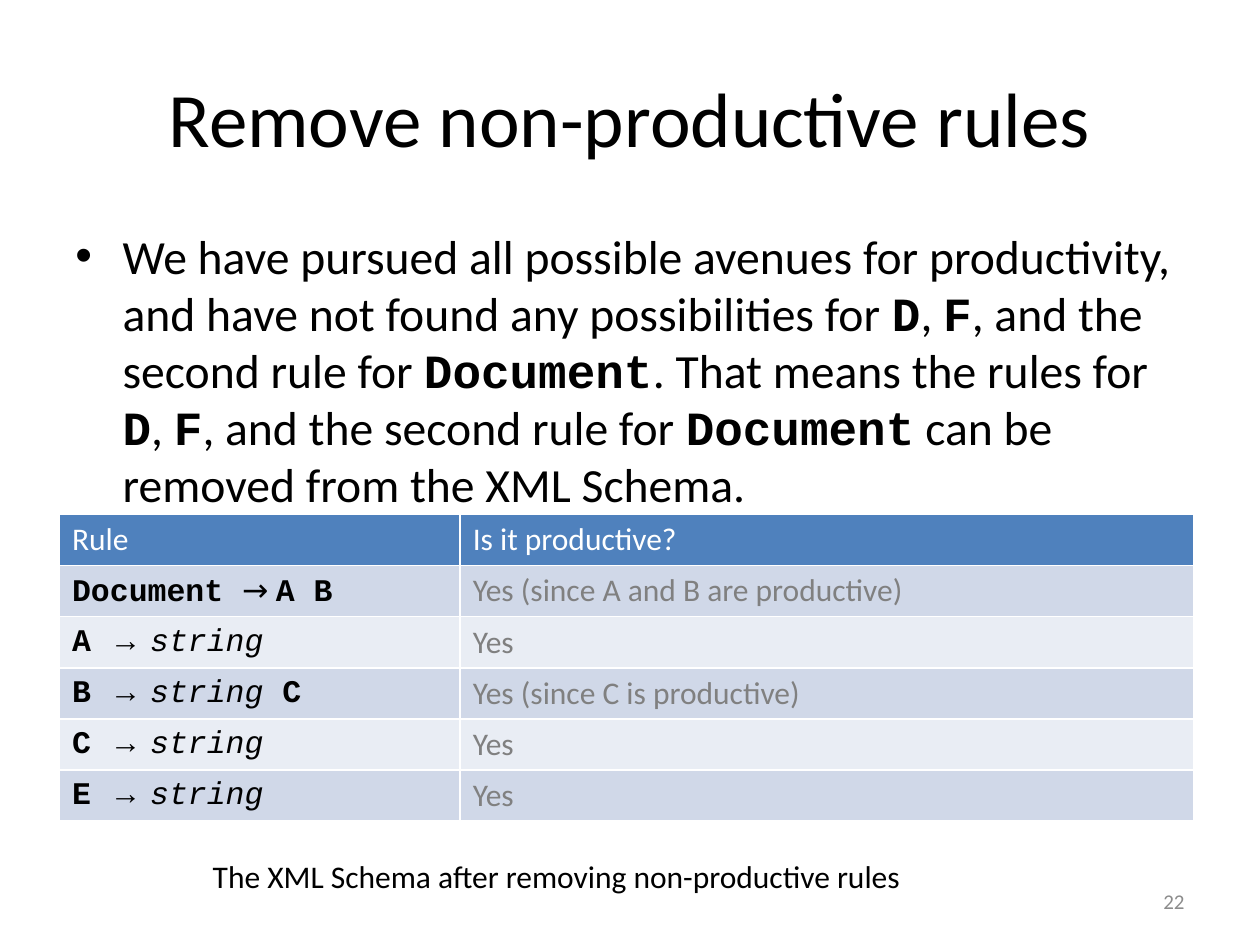
"""Build the slide on removing non-productive rules from an XML Schema."""
from dataclasses import dataclass

from lxml import etree
from pptx import Presentation
from pptx import util as u
from pptx.dml.color import RGBColor
from pptx.enum import text
from pptx.oxml import ns

TITLE = "Remove non-productive rules"
AVENUES = [
    ("We have pursued all possible avenues for productivity, "
     "and have not found any possibilities for ", "plain"),
    ("D", "symbol"), (", ", "plain"), ("F", "symbol"),
    (", and the second rule for ", "plain"), ("Document", "symbol"),
    (". That means the rules for ", "plain"),
    ("D", "symbol"), (", ", "plain"), ("F", "symbol"),
    (", and the second rule for ", "plain"), ("Document", "symbol"),
    (" can be removed from the XML Schema.", "plain"),
]
HEADINGS = ("Rule", "Is it productive?")
ARROW = ("→ ", "arrow")
RULES = [
    ([("Document ", "symbol"), ("→ ", "narrow arrow"), ("A B", "symbol")],
     "Yes (since A and B are productive)"),
    ([("A ", "symbol"), ARROW, ("string", "type")], "Yes"),
    ([("B ", "symbol"), ARROW, ("string ", "type"), ("C", "symbol")],
     "Yes (since C is productive)"),
    ([("C ", "symbol"), ARROW, ("string", "type")], "Yes"),
    ([("E ", "symbol"), ARROW, ("string", "type")], "Yes"),
]
CAPTION = "The XML Schema after removing non-productive rules"
PAGE = "22"

STYLES = {  # font, bold, italic
    "plain": ("Calibri", False, False),
    "symbol": ("Courier New", True, False),
    "type": ("Courier New", False, True),
    "arrow": ("Arial", False, False),
    "narrow arrow": ("Roboto Condensed", False, False),
}


@dataclass(frozen=True)
class Theme:
    """Colours and type sizes."""
    ink: str = "000000"
    paper: str = "FFFFFF"
    answer: str = "808080"
    page: str = "8C8C8C"
    header: str = "4F81BD"
    bands: tuple = ("D0D8E8", "E9EDF4")
    title_size: float = 44
    body_size: float = 27.2
    small_size: float = 18
    page_size: float = 12


THEME = Theme()
COLUMNS = (229, 419)
ROW_HEIGHT = 29.2


def write(paragraph, runs, size, color):
    """Add styled runs to a paragraph."""
    for words, style in runs:
        run = paragraph.add_run()
        run.text = words
        run.font.name, run.font.bold, run.font.italic = STYLES[style]
        run.font.size = u.Pt(size)
        run.font.color.rgb = RGBColor.from_string(color)


def add_text(slide, box, runs, size, color, align=text.PP_ALIGN.LEFT,
             anchor=text.MSO_ANCHOR.TOP, wrap=True):
    """Add a text box and return its paragraph."""
    frame = slide.shapes.add_textbox(*map(u.Pt, box)).text_frame
    frame.word_wrap = wrap
    frame.vertical_anchor = anchor
    paragraph = frame.paragraphs[0]
    paragraph.alignment = align
    write(paragraph, runs, size, color)
    return paragraph


def add_bullet(paragraph, indent):
    """Give a paragraph a hanging round bullet."""
    properties = paragraph._p.get_or_add_pPr()
    properties.set("marL", str(u.Pt(indent)))
    properties.set("indent", str(-u.Pt(indent)))
    etree.SubElement(properties, ns.qn("a:buFont")).set("typeface", "Arial")
    etree.SubElement(properties, ns.qn("a:buChar")).set("char", "•")


def fill_cell(cell, runs, color, fill):
    """Write a table cell with white borders and a solid fill."""
    properties = cell._tc.get_or_add_tcPr()
    for side in "LRTB":
        line = etree.SubElement(properties, ns.qn(f"a:ln{side}"), w=str(u.Pt(1)))
        solid = etree.SubElement(line, ns.qn("a:solidFill"))
        etree.SubElement(solid, ns.qn("a:srgbClr"), val=THEME.paper)
    cell.fill.solid()
    cell.fill.fore_color.rgb = RGBColor.from_string(fill)
    write(cell.text_frame.paragraphs[0], runs, THEME.small_size, color)


def add_rules(slide, left, top):
    """Add the table of rules."""
    count = len(RULES) + 1
    table = slide.shapes.add_table(
        count, len(COLUMNS), u.Pt(left), u.Pt(top),
        u.Pt(sum(COLUMNS)), u.Pt(count * ROW_HEIGHT)).table
    for column, width in zip(table.columns, COLUMNS):
        column.width = u.Pt(width)
    for column, heading in enumerate(HEADINGS):
        fill_cell(table.cell(0, column), [(heading, "plain")], THEME.paper, THEME.header)
    for row, (rule, answer) in enumerate(RULES, 1):
        band = THEME.bands[(row - 1) % 2]
        fill_cell(table.cell(row, 0), rule, THEME.ink, band)
        fill_cell(table.cell(row, 1), [(answer, "plain")], THEME.answer, band)


def main():
    """Compose and save the slide."""
    deck = Presentation()
    deck.slide_width, deck.slide_height = u.Pt(720), u.Pt(540)
    slide = deck.slides.add_slide(deck.slide_layouts[6])
    middle = text.MSO_ANCHOR.MIDDLE
    add_text(slide, (36, 21.6, 648, 90), [(TITLE, "plain")], THEME.title_size,
             THEME.ink, text.PP_ALIGN.CENTER, middle)
    add_text(slide, (516, 500.5, 168, 28.8), [(PAGE, "plain")], THEME.page_size,
             THEME.page, text.PP_ALIGN.RIGHT, middle)
    avenues = add_text(slide, (36, 126, 648, 162), AVENUES, THEME.body_size, THEME.ink)
    avenues.space_before = u.Pt(5.4)
    add_bullet(avenues, 27)
    add_text(slide, (114.5, 486, 412.5, 29), [(CAPTION, "plain")], THEME.small_size,
             THEME.ink, wrap=False)
    add_rules(slide, 34, 294)
    deck.save("out.pptx")


if __name__ == "__main__":
    main()
